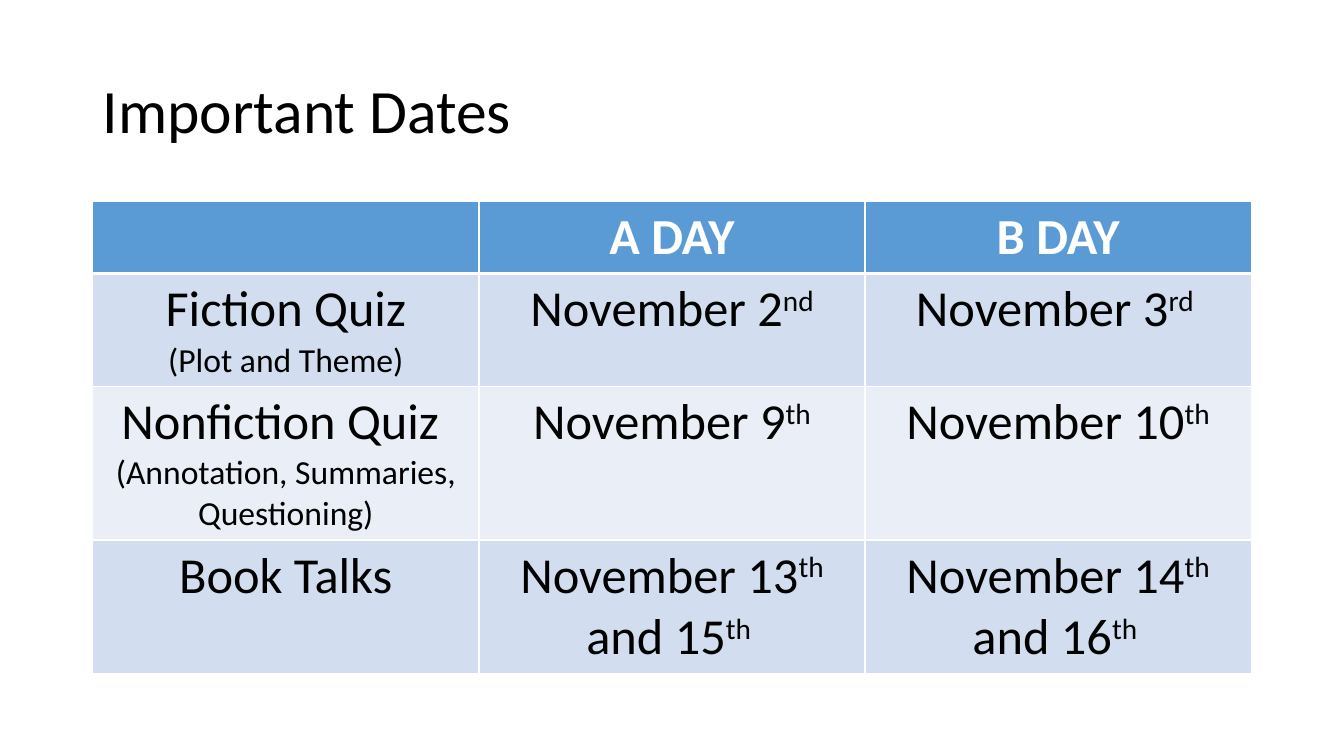
from dataclasses import dataclass

from lxml import etree
from pptx import Presentation
from pptx.dml.color import RGBColor
from pptx.enum.text import MSO_ANCHOR, PP_ALIGN
from pptx.oxml.ns import qn
from pptx.util import Inches, Pt

LEFT = PP_ALIGN.LEFT
CENTER = PP_ALIGN.CENTER
MIDDLE = MSO_ANCHOR.MIDDLE
TITLE_ONLY = 5


@dataclass(frozen=True)
class Theme:
    """Colours, font and type sizes of the slide."""

    font: str = "Calibri"
    text: str = "000000"
    light: str = "FFFFFF"
    header: str = "5B9BD5"
    bands: tuple = ("D2DEEF", "EAEFF7")
    title_size: int = 44
    entry_size: int = 36
    detail_size: int = 24
    border: int = 1
    header_border: int = 3


THEME = Theme()
ROW_HEIGHTS = (0.69, 1.11, 1.52, 1.31)
COLUMN_WIDTH = 3.83
SCHEDULE = (
    ("", "A DAY", "B DAY"),
    ("Fiction Quiz\n(Plot and Theme)", "November 2^nd", "November 3^rd "),
    (
        "Nonfiction Quiz \n(Annotation, Summaries, Questioning)",
        "November 9^th",
        "November 10^th",
    ),
    (
        "Book Talks",
        "November 13^th^ and 15^th ",
        "November 14^th^ and 16^th ",
    ),
)


def style_paragraph(paragraph, size, color, alignment, bold=False):
    """Set the font and alignment of a paragraph."""
    paragraph.alignment = alignment
    paragraph.font.name = THEME.font
    paragraph.font.size = Pt(size)
    paragraph.font.bold = bold
    paragraph.font.color.rgb = RGBColor.from_string(color)


def add_runs(paragraph, text):
    """Add text to a paragraph, raising every second part between carets."""
    for index, part in enumerate(text.split("^")):
        run = paragraph.add_run()
        run.text = part
        if index % 2:
            run._r.get_or_add_rPr().set("baseline", "30000")


def set_borders(cell, bottom_width):
    """Draw light lines on the four sides of a cell."""
    properties = cell._tc.get_or_add_tcPr()
    widths = dict.fromkeys(("a:lnL", "a:lnR", "a:lnT"), THEME.border)
    widths["a:lnB"] = bottom_width
    for index, (side, width) in enumerate(widths.items()):
        line = etree.Element(qn(side), w=str(Pt(width)))
        fill = etree.SubElement(line, qn("a:solidFill"))
        etree.SubElement(fill, qn("a:srgbClr"), val=THEME.light)
        properties.insert(index, line)


def fill_cell(cell, text, row_index):
    """Write and format one cell of the schedule."""
    is_header = row_index == 0
    fill_color = THEME.header if is_header else THEME.bands[(row_index - 1) % 2]
    cell.fill.solid()
    cell.fill.fore_color.rgb = RGBColor.from_string(fill_color)
    set_borders(cell, THEME.header_border if is_header else THEME.border)
    if not text:
        return
    for index, line in enumerate(text.split("\n")):
        frame = cell.text_frame
        paragraph = frame.add_paragraph() if index else frame.paragraphs[0]
        size = THEME.detail_size if index else THEME.entry_size
        color = THEME.light if is_header else THEME.text
        style_paragraph(paragraph, size, color, CENTER, is_header)
        add_runs(paragraph, line)


def add_title(slide, text):
    """Place and format the slide title."""
    title = slide.shapes.title
    title.left, title.top = Inches(0.92), Inches(0.4)
    title.width, title.height = Inches(11.5), Inches(1.45)
    title.text_frame.vertical_anchor = MIDDLE
    paragraph = title.text_frame.paragraphs[0]
    paragraph.line_spacing = 0.9
    style_paragraph(paragraph, THEME.title_size, THEME.text, LEFT)
    add_runs(paragraph, text)


def add_schedule(slide, rows):
    """Add the table of dates."""
    table = slide.shapes.add_table(
        len(rows), len(rows[0]), Inches(0.92), Inches(2),
        Inches(COLUMN_WIDTH * len(rows[0])), Inches(sum(ROW_HEIGHTS)),
    ).table
    for column in table.columns:
        column.width = Inches(COLUMN_WIDTH)
    for row_index, texts in enumerate(rows):
        table.rows[row_index].height = Inches(ROW_HEIGHTS[row_index])
        for column_index, text in enumerate(texts):
            fill_cell(table.cell(row_index, column_index), text, row_index)


def main():
    """Build and save the slide."""
    presentation = Presentation()
    presentation.slide_width = Inches(13.33)
    presentation.slide_height = Inches(7.5)
    slide = presentation.slides.add_slide(presentation.slide_layouts[TITLE_ONLY])
    add_title(slide, "Important Dates")
    add_schedule(slide, SCHEDULE)
    presentation.save("out.pptx")


if __name__ == "__main__":
    main()
